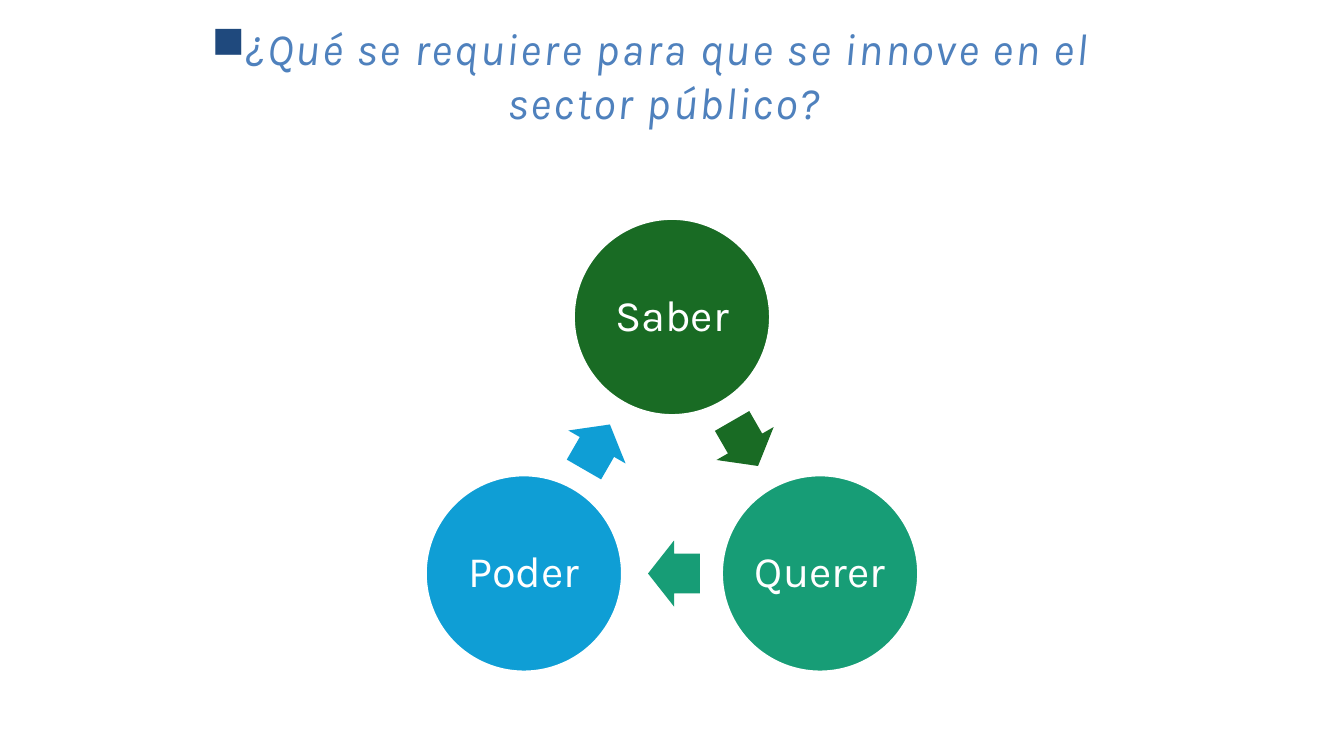
import math

from lxml import etree
from pptx import Presentation
from pptx.dml.color import RGBColor
from pptx.enum.shapes import MSO_SHAPE
from pptx.enum.text import MSO_ANCHOR, MSO_AUTO_SIZE, PP_ALIGN
from pptx.oxml.ns import qn
from pptx.util import Pt

OVAL, ARROW = MSO_SHAPE.OVAL, MSO_SHAPE.RIGHT_ARROW
TOP, MIDDLE = MSO_ANCHOR.TOP, MSO_ANCHOR.MIDDLE
CENTER = PP_ALIGN.CENTER
NO_AUTOFIT = MSO_AUTO_SIZE.NONE

TITLE = "¿Qué se requiere para que se innove en el sector público?"
STEPS = [("Saber", "green"), ("Querer", "teal"), ("Poder", "blue")]
COLORS = {
    "green": "196B24",
    "teal": "179D76",
    "blue": "0F9ED5",
    "white": "FFFFFF",
    "title": "4F81BD",
    "bullet": "1F497D",
}
TITLE_FONT = {"name": "Karla", "size": Pt(32), "italic": True, "bold": False}
STEP_FONT = {"name": "Karla", "size": Pt(31)}

EMU_PER_PX = 914400 / 100.8
SLIDE_SIZE = (1344, 756)
TITLE_BOX = (185, 16, 928, 158)
CYCLE_CENTER = (672, 488)
CYCLE_RADIUS = 171
CIRCLE_SIZE = 197
ARROW_SIZE = (52, 66)
ARROW_SETBACK = 2
CIRCLE_INSET = 4
BULLET_MARGIN, BULLET_INDENT = 30, -25


def emu(px):
    return round(px * EMU_PER_PX)


def color(name):
    return RGBColor.from_string(COLORS[name])


def format_font(font, values, color_name):
    for name, value in values.items():
        setattr(font, name, value)
    font.color.rgb = color(color_name)


def add_centered_shape(slide, kind, center, size, fill):
    left, top = (middle - length / 2 for middle, length in zip(center, size))
    shape = slide.shapes.add_shape(kind, *map(emu, (left, top, *size)))
    shape.shadow.inherit = False
    shape.fill.solid()
    shape.fill.fore_color.rgb = color(fill)
    return shape


def add_title(slide):
    title = slide.shapes.title
    title.left, title.top, title.width, title.height = map(emu, TITLE_BOX)
    frame = title.text_frame
    frame.auto_size = NO_AUTOFIT
    frame.word_wrap = True
    frame.vertical_anchor = TOP
    paragraph = frame.paragraphs[0]
    paragraph.alignment = CENTER
    properties = paragraph._p.get_or_add_pPr()
    properties.set("marL", str(emu(BULLET_MARGIN)))
    properties.set("indent", str(emu(BULLET_INDENT)))
    bullet_color = etree.SubElement(properties, qn("a:buClr"))
    etree.SubElement(bullet_color, qn("a:srgbClr"), val=COLORS["bullet"])
    etree.SubElement(properties, qn("a:buChar"), char="■")
    run = paragraph.add_run()
    run.text = TITLE
    format_font(run.font, TITLE_FONT, "title")
    run.font._element.set("spc", "150")


def add_step(slide, label, fill, center):
    circle = add_centered_shape(slide, OVAL, center, (CIRCLE_SIZE, CIRCLE_SIZE), fill)
    circle.line.color.rgb = color("white")
    circle.line.width = Pt(2)
    frame = circle.text_frame
    frame.word_wrap = False
    frame.vertical_anchor = MIDDLE
    for side in ("left", "top", "right", "bottom"):
        setattr(frame, f"margin_{side}", emu(CIRCLE_INSET))
    paragraph = frame.paragraphs[0]
    paragraph.alignment = CENTER
    paragraph.line_spacing = 0.9
    run = paragraph.add_run()
    run.text = label
    format_font(run.font, STEP_FONT, "white")


def add_cycle_arrow(slide, start, end, fill):
    """Place an arrow just before the midpoint of two circles, aimed at the second."""
    angle = math.atan2(end[1] - start[1], end[0] - start[0])
    center = (
        (start[0] + end[0]) / 2 - ARROW_SETBACK * math.cos(angle),
        (start[1] + end[1]) / 2 - ARROW_SETBACK * math.sin(angle),
    )
    arrow = add_centered_shape(slide, ARROW, center, ARROW_SIZE, fill)
    arrow.line.fill.background()
    arrow.adjustments[0] = 0.6
    arrow.adjustments[1] = 0.5
    arrow.rotation = round(math.degrees(angle)) % 360


def main():
    presentation = Presentation()
    presentation.slide_width, presentation.slide_height = map(emu, SLIDE_SIZE)
    slide = presentation.slides.add_slide(presentation.slide_layouts[5])
    add_title(slide)

    turns = [2 * math.pi * index / len(STEPS) for index in range(len(STEPS))]
    centers = [
        (CYCLE_CENTER[0] + CYCLE_RADIUS * math.sin(turn),
         CYCLE_CENTER[1] - CYCLE_RADIUS * math.cos(turn))
        for turn in turns
    ]
    for index, (label, fill) in enumerate(STEPS):
        add_step(slide, label, fill, centers[index])
        following = centers[(index + 1) % len(STEPS)]
        add_cycle_arrow(slide, centers[index], following, fill)

    presentation.save("out.pptx")


if __name__ == "__main__":
    main()
